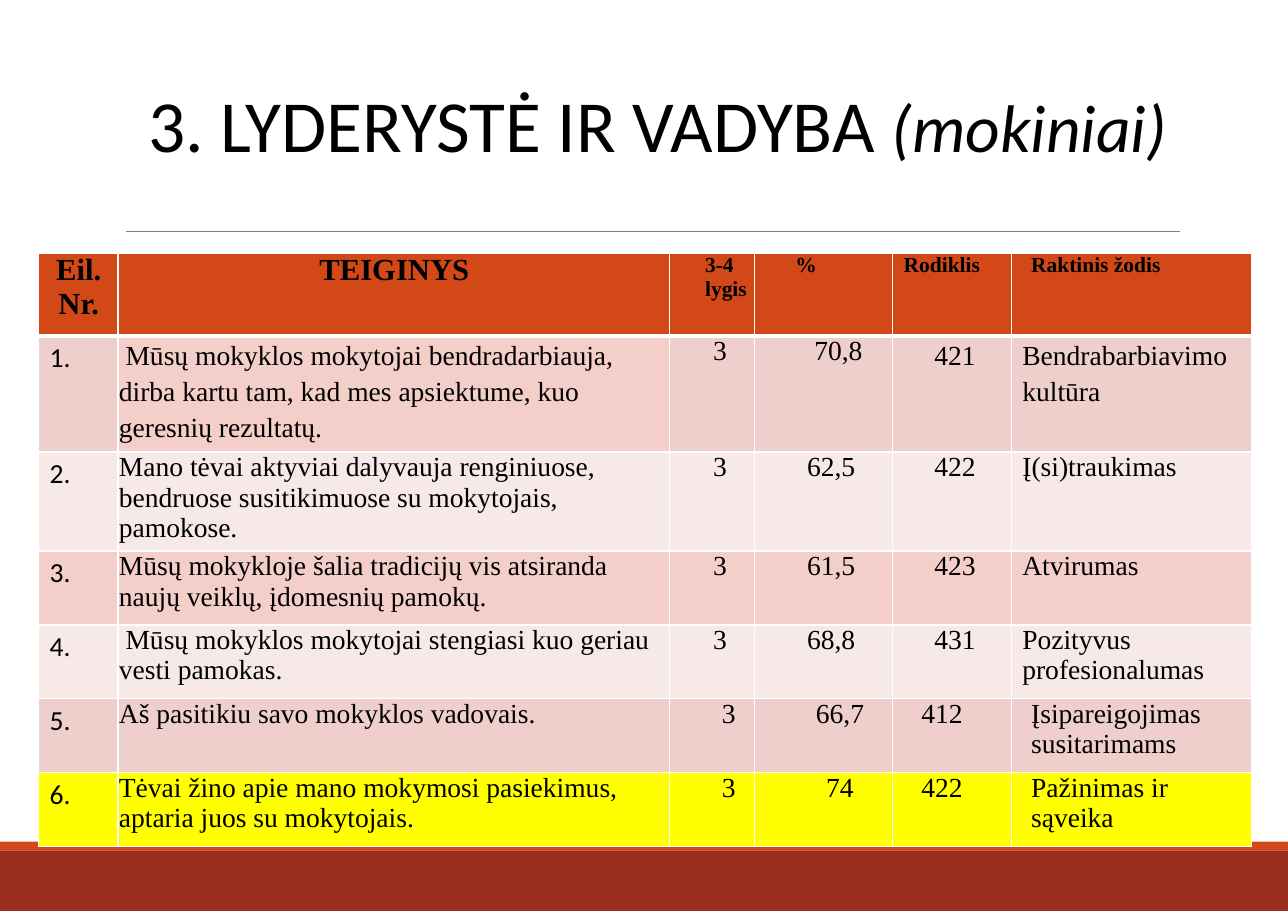
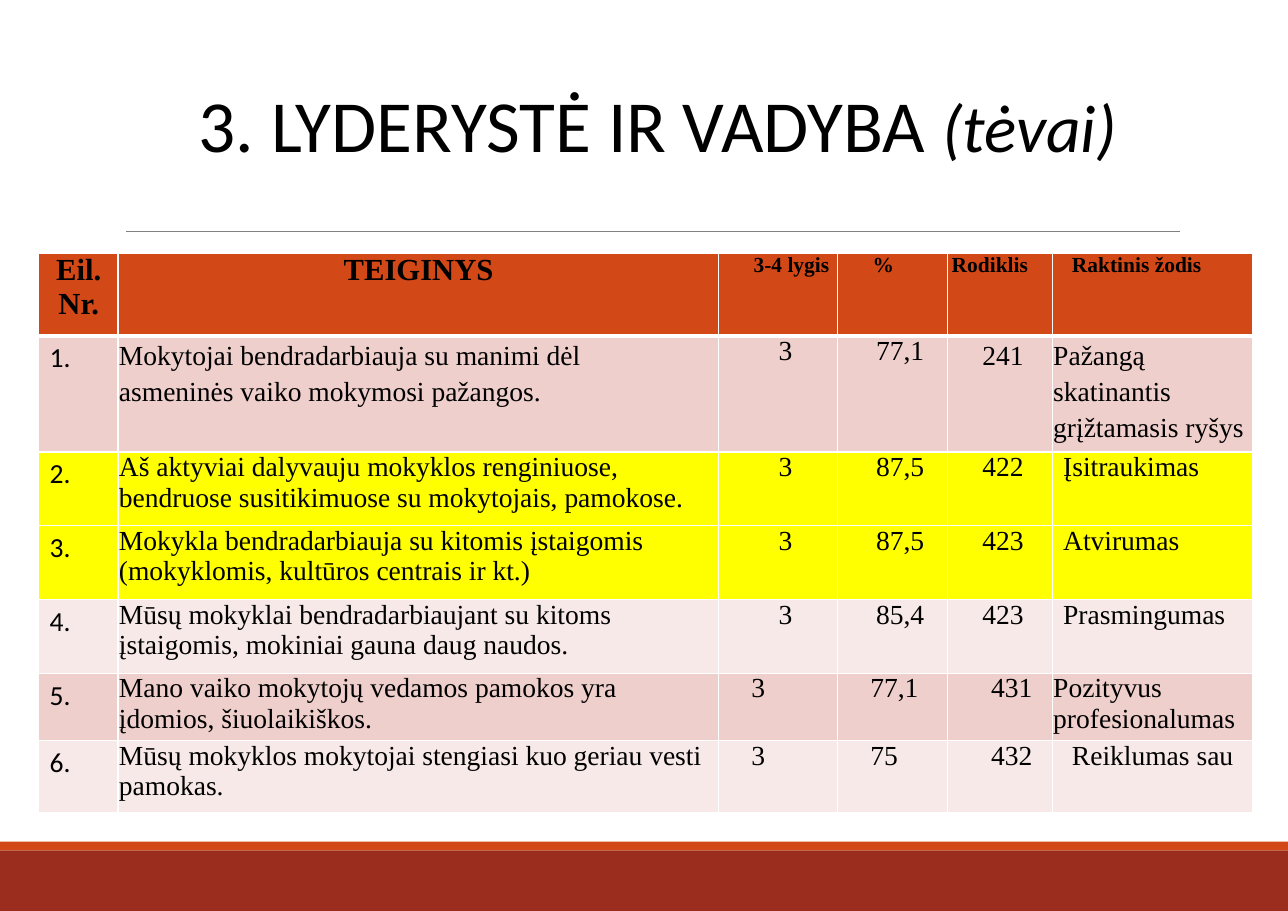
from lxml import etree
from pptx import Presentation
from pptx.dml.color import RGBColor
from pptx.enum.shapes import MSO_CONNECTOR, MSO_SHAPE
from pptx.enum.text import PP_ALIGN
from pptx.oxml.ns import qn
from pptx.util import Inches, Pt

LEFT, CENTER, RIGHT = PP_ALIGN.LEFT, PP_ALIGN.CENTER, PP_ALIGN.RIGHT
SERIF, SANS = "Times New Roman", "Calibri"
BLACK, WHITE, GRAY = "000000", "FFFFFF", "808080"
ORANGE, BRICK, YELLOW = "D34817", "9B2D1F", "FFFF00"
ROSE, PALE, SALMON = "EFCFCC", "F7E9E8", "F4CEC9"

BANDS = [(7.72, 0.55, BRICK), (7.64, 0.08, ORANGE)]

# Column layouts: alignment, left indent, right margin, first-line indent
NUMBER = (LEFT, 0, 0.1, 0)
STATEMENT = (LEFT, 0.01, 0.05, 0)
SPACED = (LEFT, 0.01, 0.05, 0.06)
NEAR, FAR = (CENTER, 0.14, 0, 0), (CENTER, 0.3, 0, 0)
SHIFTED = (CENTER, 0.27, 0, 0)
START = (LEFT, 0.3, 0, 0)
CODE, CODE_PADDED, CODE_RIGHT = (CENTER, 0.06, 0, 0), (CENTER, 0, 0.18, 0), (RIGHT, 0, 0.18, 0)
FLUSH, WORD, WORD_FAR = (LEFT, 0.01, 0, 0), (LEFT, 0.1, 0, 0), (LEFT, 0.18, 0.1, 0)
HEAD, HEAD_LEFT, HEAD_PERCENT = (CENTER, 0.01, 0, 0), (LEFT, 0.32, 0, 0), (LEFT, 0.37, 0, 0)

PLAIN = [NUMBER, STATEMENT, NEAR, NEAR, CODE, WORD]
FIRST_PUPILS = [NUMBER, SPACED, NEAR, SHIFTED, CODE, WORD]
FIRST_PARENTS = [NUMBER, STATEMENT, NEAR, NEAR, CODE, FLUSH]
INDENTED = [NUMBER, SPACED, NEAR, NEAR, CODE, WORD]
LAST_PUPILS = [NUMBER, STATEMENT, FAR, FAR, CODE_PADDED, WORD_FAR]
FIFTH_PARENTS = [NUMBER, STATEMENT, START, START, CODE_RIGHT, FLUSH]
SIXTH_PARENTS = [NUMBER, STATEMENT, START, START, CODE_RIGHT, WORD_FAR]

HEADINGS = ["Eil.\nNr.", "TEIGINYS", "3-4 lygis", "%", "Rodiklis", "Raktinis žodis"]

SURVEYS = [
    {
        "group": "(mokiniai)",
        "columns": [0.72, 5.01, 0.77, 1.25, 1.08, 2.18],
        "heights": [0.75, 1.04, 0.9, 0.67, 0.67, 0.67, 0.67],
        "heading": [HEAD, HEAD, HEAD_LEFT, HEAD_PERCENT, CODE_PADDED, WORD_FAR],
        "accents": {(1, 1): SALMON},
        "rows": [
            (ROSE, FIRST_PUPILS, "Mūsų mokyklos mokytojai bendradarbiauja, dirba kartu tam, kad mes "
             "apsiektume, kuo geresnių rezultatų.", "70,8", "421", "Bendrabarbiavimo kultūra"),
            (PALE, PLAIN, "Mano tėvai aktyviai dalyvauja renginiuose, bendruose susitikimuose su "
             "mokytojais, pamokose.", "62,5", "422", "Į(si)traukimas"),
            (SALMON, PLAIN, "Mūsų mokykloje šalia tradicijų vis atsiranda naujų veiklų, įdomesnių "
             "pamokų.", "61,5", "423", "Atvirumas"),
            (PALE, INDENTED, "Mūsų mokyklos mokytojai stengiasi kuo geriau vesti pamokas.",
             "68,8", "431", "Pozityvus profesionalumas"),
            (ROSE, LAST_PUPILS, "Aš pasitikiu savo mokyklos vadovais.",
             "66,7", "412", "Įsipareigojimas susitarimams"),
            (YELLOW, LAST_PUPILS, "Tėvai žino apie mano mokymosi pasiekimus, aptaria juos su "
             "mokytojais.", "74", "422", "Pažinimas ir sąveika"),
        ],
    },
    {
        "group": "(tėvai)",
        "columns": [0.72, 5.45, 1.08, 1, 0.95, 1.82],
        "heights": [0.75, 1.04, 0.67, 0.67, 0.67, 0.61, 0.66],
        "heading": [HEAD, HEAD, HEAD_LEFT, HEAD_LEFT, CODE_PADDED, WORD_FAR],
        "accents": {},
        "rows": [
            (ROSE, FIRST_PARENTS, "Mokytojai bendradarbiauja su manimi dėl\nasmeninės vaiko mokymosi "
             "pažangos.", "77,1", "241", "Pažangą skatinantis\ngrįžtamasis ryšys"),
            (YELLOW, PLAIN, "Aš aktyviai dalyvauju mokyklos renginiuose,\nbendruose susitikimuose su "
             "mokytojais, pamokose.", "87,5", "422", "Įsitraukimas"),
            (YELLOW, PLAIN, "Mokykla bendradarbiauja su kitomis įstaigomis\n(mokyklomis, kultūros "
             "centrais ir kt.)", "87,5", "423", "Atvirumas"),
            (PALE, PLAIN, "Mūsų mokyklai bendradarbiaujant su kitoms\nįstaigomis, mokiniai gauna "
             "daug naudos.", "85,4", "423", "Prasmingumas"),
            (ROSE, FIFTH_PARENTS, "Mano vaiko mokytojų vedamos pamokos yra\nįdomios, šiuolaikiškos.",
             "77,1", "431", "Pozityvus\nprofesionalumas"),
            (PALE, SIXTH_PARENTS, "Mūsų mokyklos mokytojai stengiasi kuo geriau vesti pamokas.",
             "75", "432", "Reiklumas sau"),
        ],
    },
]


def color(value):
    return RGBColor.from_string(value)


def set_borders(cell, widths):
    properties = cell._tc.get_or_add_tcPr()
    for side, width in zip("LRTB", widths):
        line = etree.SubElement(properties, qn(f"a:ln{side}"), w=str(Pt(width)))
        fill = etree.SubElement(line, qn("a:solidFill"))
        etree.SubElement(fill, qn("a:srgbClr"), val=WHITE)


presentation = Presentation()
presentation.slide_width, presentation.slide_height = Inches(11.69), Inches(8.27)

for survey in SURVEYS:
    slide = presentation.slides.add_slide(presentation.slide_layouts[6])

    for top, height, fill in BANDS:
        band = slide.shapes.add_shape(
            MSO_SHAPE.RECTANGLE, 0, Inches(top), presentation.slide_width, Inches(height))
        band.shadow.inherit = False
        band.fill.solid()
        band.fill.fore_color.rgb = color(fill)
        band.line.fill.background()

    rule = slide.shapes.add_connector(
        MSO_CONNECTOR.STRAIGHT, Inches(1.14), Inches(2.1), Inches(10.71), Inches(2.1))
    rule.line.color.rgb = color(GRAY)
    rule.line.width = Pt(0.5)
    etree.SubElement(rule._element.spPr, qn("a:effectLst"))

    title = slide.shapes.add_textbox(Inches(0.76), Inches(0.64), Inches(10.42), Inches(1.4))
    title.text_frame.word_wrap = True
    title.text_frame.margin_top = Inches(0.08)
    paragraph = title.text_frame.paragraphs[0]
    paragraph.alignment = CENTER
    paragraph.font.name = SANS
    paragraph.font.color.rgb = color(BLACK)
    for text, size, italic in [("3. LYDERYSTĖ IR VADYBA ", 48, False), (survey["group"], 44, True)]:
        run = paragraph.add_run()
        run.text = text
        run.font.size = Pt(size)
        run.font.italic = italic

    rows = [(ORANGE, survey["heading"], HEADINGS)]
    for number, (fill, layout, statement, percent, code, keyword) in enumerate(survey["rows"], 1):
        rows.append((fill, layout, [f"{number}.", statement, "3", percent, code, keyword]))

    columns, heights = survey["columns"], survey["heights"]
    table = slide.shapes.add_table(
        len(rows), len(columns), Inches(0.35), Inches(2.3),
        Inches(sum(columns)), Inches(sum(heights))).table
    for column, width in zip(table.columns, columns):
        column.width = Inches(width)
    for row, height in zip(table.rows, heights):
        row.height = Inches(height)

    for row_index, (fill, layout, texts) in enumerate(rows):
        heading = row_index == 0
        for column_index, (text, style) in enumerate(zip(texts, layout)):
            alignment, indent, right_margin, first_indent = style
            numbering = column_index == 0 and not heading
            cell = table.cell(row_index, column_index)
            cell.margin_left = Inches(0.1 if numbering else 0)
            cell.margin_right = Inches(right_margin)
            cell.margin_top = cell.margin_bottom = Inches(0.05 if numbering else 0)
            set_borders(cell, (1, 1, 3 if row_index == 1 else 1, 3 if heading else 1))
            cell.fill.solid()
            cell.fill.fore_color.rgb = color(
                survey["accents"].get((row_index, column_index), fill))
            cell.text_frame.text = text
            for paragraph in cell.text_frame.paragraphs:
                properties = paragraph._p.get_or_add_pPr()
                properties.set("marL", str(Inches(indent)))
                properties.set("indent", str(Inches(first_indent)))
                paragraph.alignment = alignment
                if row_index == 1 and column_index in (1, 4, 5):
                    paragraph.line_spacing = 1.17
                paragraph.font.name = SANS if numbering else SERIF
                paragraph.font.bold = heading
                paragraph.font.color.rgb = color(BLACK)
                if heading:
                    paragraph.font.size = Pt(20 if column_index < 2 else 14)
                else:
                    paragraph.font.size = Pt(18)

presentation.save("out.pptx")
